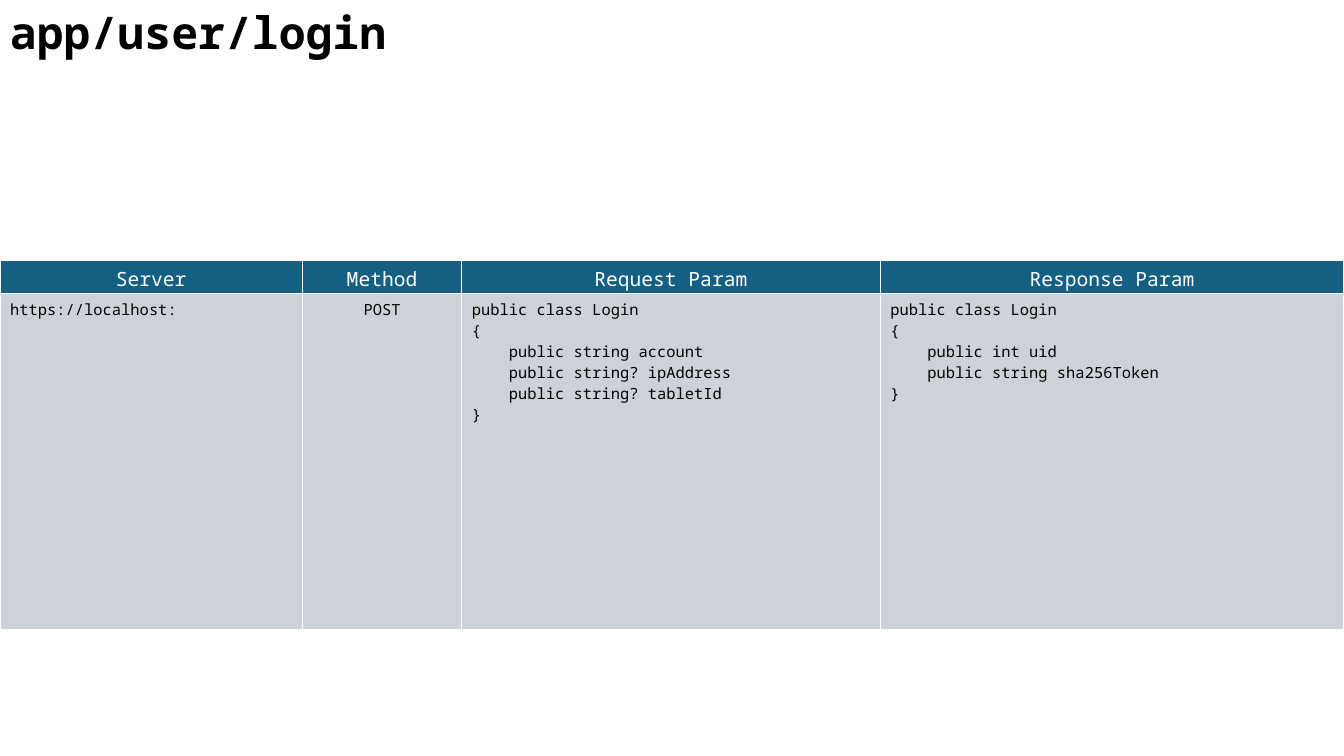
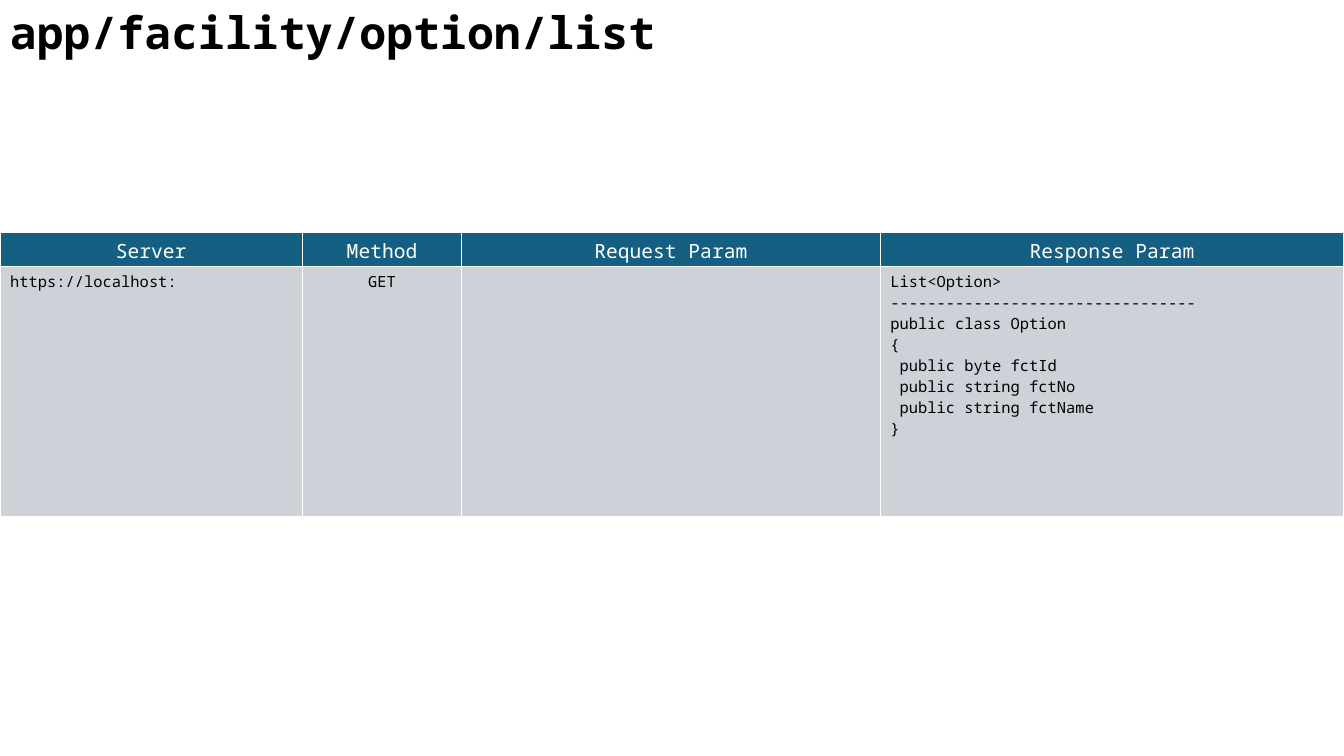
from lxml import etree
from pptx import Presentation
from pptx.dml.color import RGBColor
from pptx.enum.text import MSO_AUTO_SIZE, PP_ALIGN
from pptx.oxml.ns import qn
from pptx.util import Inches, Pt

LEFT, CENTER = PP_ALIGN.LEFT, PP_ALIGN.CENTER
GROW = MSO_AUTO_SIZE.SHAPE_TO_FIT_TEXT

FONT = "Noto Sans Mono"
COLORS = {"head": "156082", "body": "CCD2D8", "text": "000000", "white": "FFFFFF"}
WIDTH, HEIGHT = 13.33, 7.5
COLS = (3, 1.58, 4.15, 4.6)
HEADS = ("Server", "Method", "Request Param", "Response Param")
ALIGNS = (LEFT, CENTER, LEFT, LEFT)
HEAD_H = 0.33
SERVER = "https://localhost:"

LOGIN_IN = """public class Login
{
    public string account
    public string? ipAddress
    public string? tabletId
}"""

LOGIN_OUT = """public class Login
{
    public int uid
    public string sha256Token
}"""

OPTION_OUT = """List<Option>
---------------------------------
public class Option
{
 public byte fctId
 public string fctNo
 public string fctName
}"""

# Title, table top, body row height, body cells
PAGES = (
    ("app/user/login", 2.58, 3.33, (SERVER, "POST", LOGIN_IN, LOGIN_OUT)),
    ("app/facility/option/list", 2.31, 2.48, (SERVER, "GET", "", OPTION_OUT)),
)


def color(name):
    return RGBColor.from_string(COLORS[name])


def write(frame, text, size, ink, align=LEFT, bold=False):
    frame.text = text
    for para in frame.paragraphs:
        para.alignment = align
        font = para.font
        font.name, font.size, font.bold = FONT, Pt(size), bold
        font.color.rgb = color(ink)


def add_title(slide, text):
    box = slide.shapes.add_textbox(0, 0, Inches(9.45), Inches(0.64))
    frame = box.text_frame
    frame.word_wrap = True
    frame.auto_size = GROW
    write(frame, text, 32, "text", bold=True)


def add_edges(cell):
    """Draw a thin white line on all four sides of a cell."""
    props = cell._tc.get_or_add_tcPr()
    for side in "LRTB":
        line = etree.SubElement(props, qn(f"a:ln{side}"), w=str(Pt(1)))
        fill = etree.SubElement(line, qn("a:solidFill"))
        etree.SubElement(fill, qn("a:srgbClr"), val=COLORS["white"])


def paint(cell, name):
    cell.fill.solid()
    cell.fill.fore_color.rgb = color(name)


def add_grid(slide, top, body_h, texts):
    rows = (HEAD_H, body_h)
    table = slide.shapes.add_table(
        len(rows), len(COLS), 0, Inches(top), Inches(WIDTH), Inches(sum(rows))
    ).table
    for row, height in zip(table.rows, rows):
        row.height = Inches(height)
    for i, (width, head, text, align) in enumerate(zip(COLS, HEADS, texts, ALIGNS)):
        table.columns[i].width = Inches(width)
        top_cell, cell = table.cell(0, i), table.cell(1, i)
        write(top_cell.text_frame, head, 14, "white", CENTER)
        paint(top_cell, "head")
        write(cell.text_frame, text, 11, "text", align)
        add_edges(cell)
        paint(cell, "body")


def main():
    deck = Presentation()
    deck.slide_width, deck.slide_height = Inches(WIDTH), Inches(HEIGHT)
    blank = deck.slide_layouts[6]
    for title, top, body_h, texts in PAGES:
        slide = deck.slides.add_slide(blank)
        add_title(slide, title)
        add_grid(slide, top, body_h, texts)
    deck.save("out.pptx")


if __name__ == "__main__":
    main()
